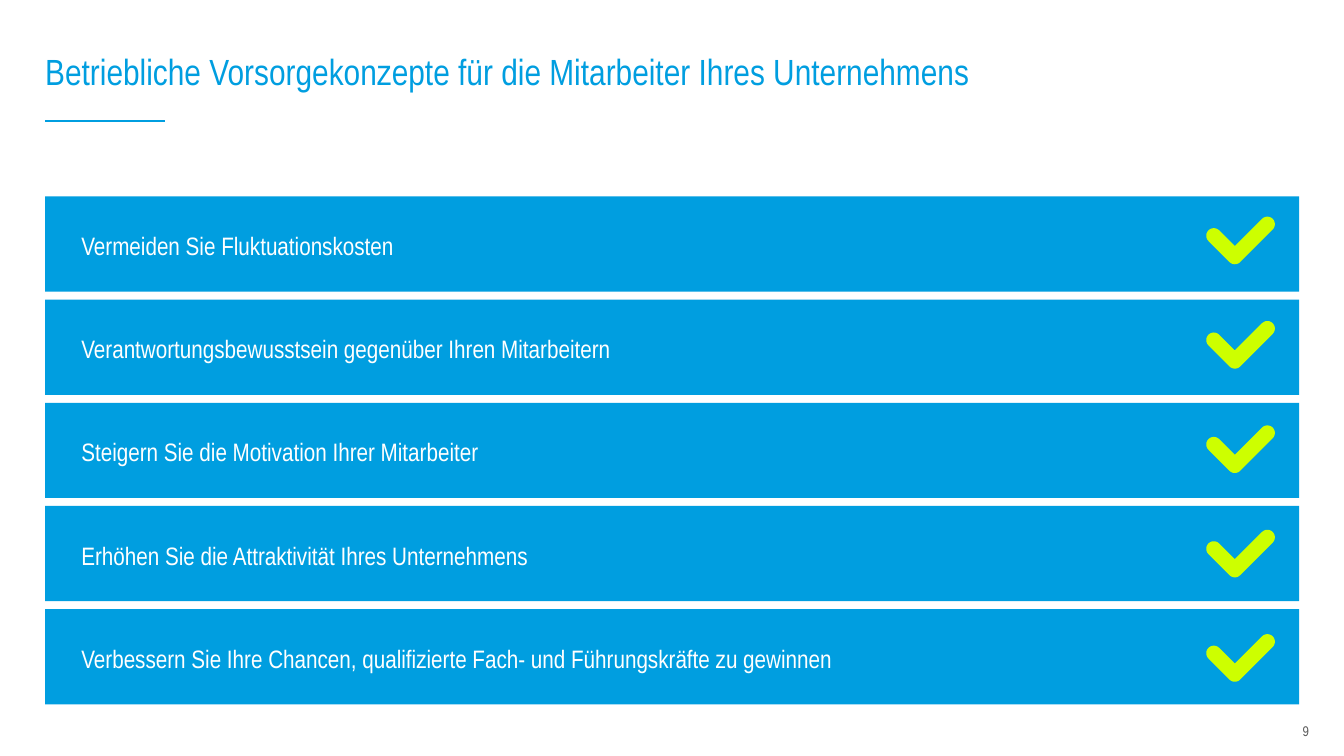
from dataclasses import dataclass
from math import cos, radians, sin

from lxml import etree
from pptx import Presentation
from pptx import util as u
from pptx.dml.color import RGBColor
from pptx.enum import shapes, text
from pptx.oxml.ns import qn


@dataclass(frozen=True)
class Theme:
    font: str = "Arial Narrow"
    blue: RGBColor = RGBColor(0x00, 0x9E, 0xE0)
    lime: RGBColor = RGBColor(0xCD, 0xFF, 0x00)
    gray: RGBColor = RGBColor(0x57, 0x57, 0x57)
    white: RGBColor = RGBColor(0xFF, 0xFF, 0xFF)
    title: int = 26
    body: int = 18
    small: int = 10


theme = Theme()
Cm = u.Cm


def write(shape, words, size, color, align=text.PP_ALIGN.LEFT, space=1.1, pads=(0, 0, 0, 0)):
    """Put one styled line of text in a shape; pads are left, top, right, bottom."""
    frame = shape.text_frame
    frame.text = words
    frame.word_wrap = True
    frame.vertical_anchor = text.MSO_ANCHOR.MIDDLE
    frame.margin_left, frame.margin_top, frame.margin_right, frame.margin_bottom = map(Cm, pads)
    line = frame.paragraphs[0]
    line.alignment = align
    line.line_spacing = space
    font = line.runs[0].font
    font.name = theme.font
    font.size = u.Pt(size)
    font.color.rgb = color


def paint(shape, color):
    shape.shadow.inherit = False
    shape.fill.solid()
    shape.fill.fore_color.rgb = color
    shape.line.fill.background()


deck = Presentation()
deck.slide_width, deck.slide_height = Cm(33.87), Cm(19.05)
slide = deck.slides.add_slide(deck.slide_layouts[6])
items = slide.shapes
left = 1.14

# Title and rule
title = items.add_textbox(Cm(left), Cm(0.91), Cm(27.41), Cm(1.9))
write(title, "Betriebliche Vorsorgekonzepte für die Mitarbeiter Ihres Unternehmens",
      theme.title, theme.blue, space=0.9)
rule = items.add_connector(shapes.MSO_CONNECTOR.STRAIGHT, Cm(left), Cm(3.06), Cm(4.15), Cm(3.06))
rule.line.color.rgb = theme.blue
rule.line.width = u.Pt(1.5)
etree.SubElement(rule._element.spPr, qn("a:effectLst"))

# Outline of the check mark: three round ends and the inner corner
radius = 0.19
ends = [(0.72, 1.01, 135, 45), (1.54, 0.19, 45, -135), (0.19, 0.48, -45, -225)]
arcs = [
    [(x + radius * cos(radians(start + (stop - start) * k / 12)),
      y + radius * sin(radians(start + (stop - start) * k / 12))) for k in range(13)]
    for x, y, start, stop in ends
]
check = arcs[0] + arcs[1] + [(0.72, 0.74)] + arcs[2]

# Benefit bars
lines = [
    "Vermeiden Sie Fluktuationskosten",
    "Verantwortungsbewusstsein gegenüber Ihren Mitarbeitern",
    "Steigern Sie die Motivation Ihrer Mitarbeiter",
    "Erhöhen Sie die Attraktivität Ihres Unternehmens",
    "Verbessern Sie Ihre Chancen, qualifizierte Fach- und Führungskräfte zu gewinnen",
]
for row, words in enumerate(lines):
    bar = items.add_shape(shapes.MSO_SHAPE.RECTANGLE, Cm(left), Cm(4.95 + 2.6 * row),
                          Cm(31.86 - 0.26), Cm(2.4))
    paint(bar, theme.blue)
    write(bar, words, theme.body, theme.white, pads=(0.91, 0.2, 2.39, 0.2))

# Check marks
for row in range(len(lines)):
    points = [(Cm(30.4 + x), Cm(5.46 + 2.63 * row + y)) for x, y in check]
    pen = items.build_freeform(*points[0])
    pen.add_line_segments(points[1:], close=True)
    paint(pen.convert_to_shape(), theme.lime)

# Page number
page = items.add_textbox(Cm(31.78), Cm(18.24), Cm(0.94), Cm(0.3))
write(page, "9", theme.small, theme.gray, align=text.PP_ALIGN.RIGHT)
page.left = Cm(32.99 - 0.94)

deck.save("out.pptx")
